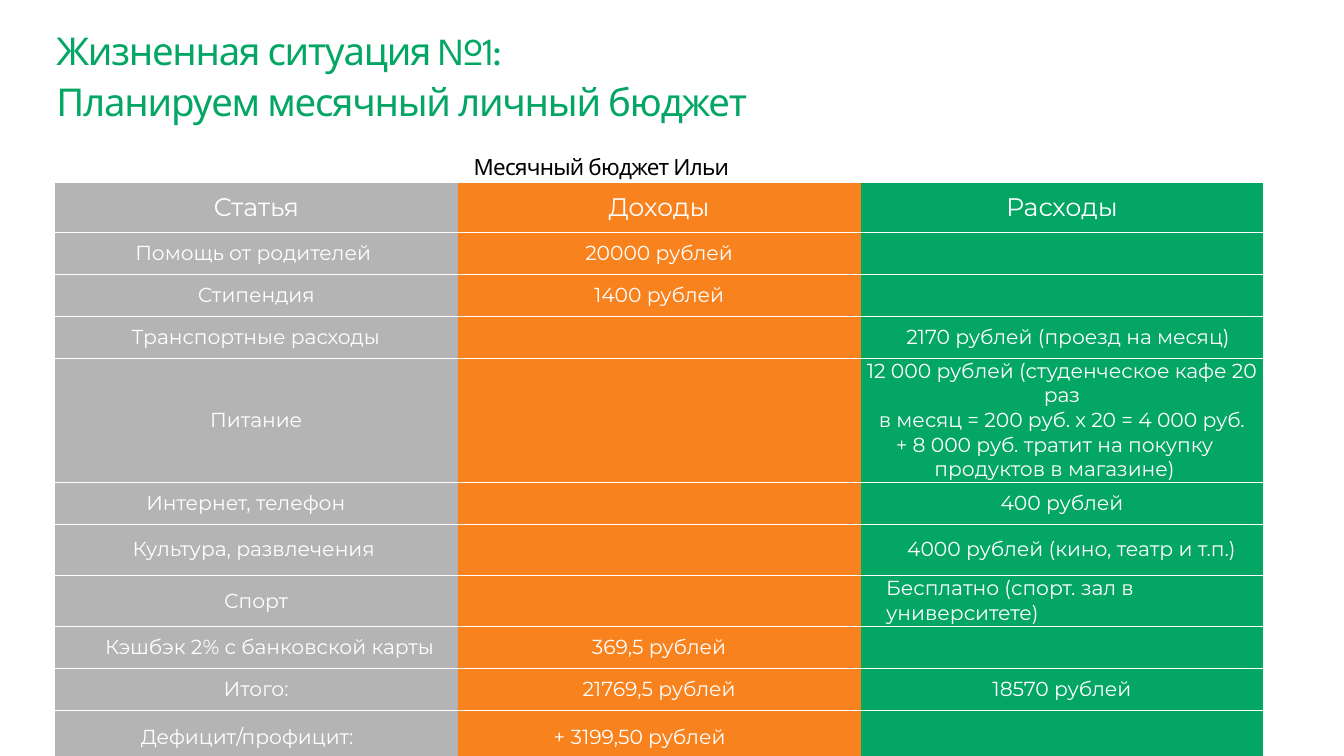
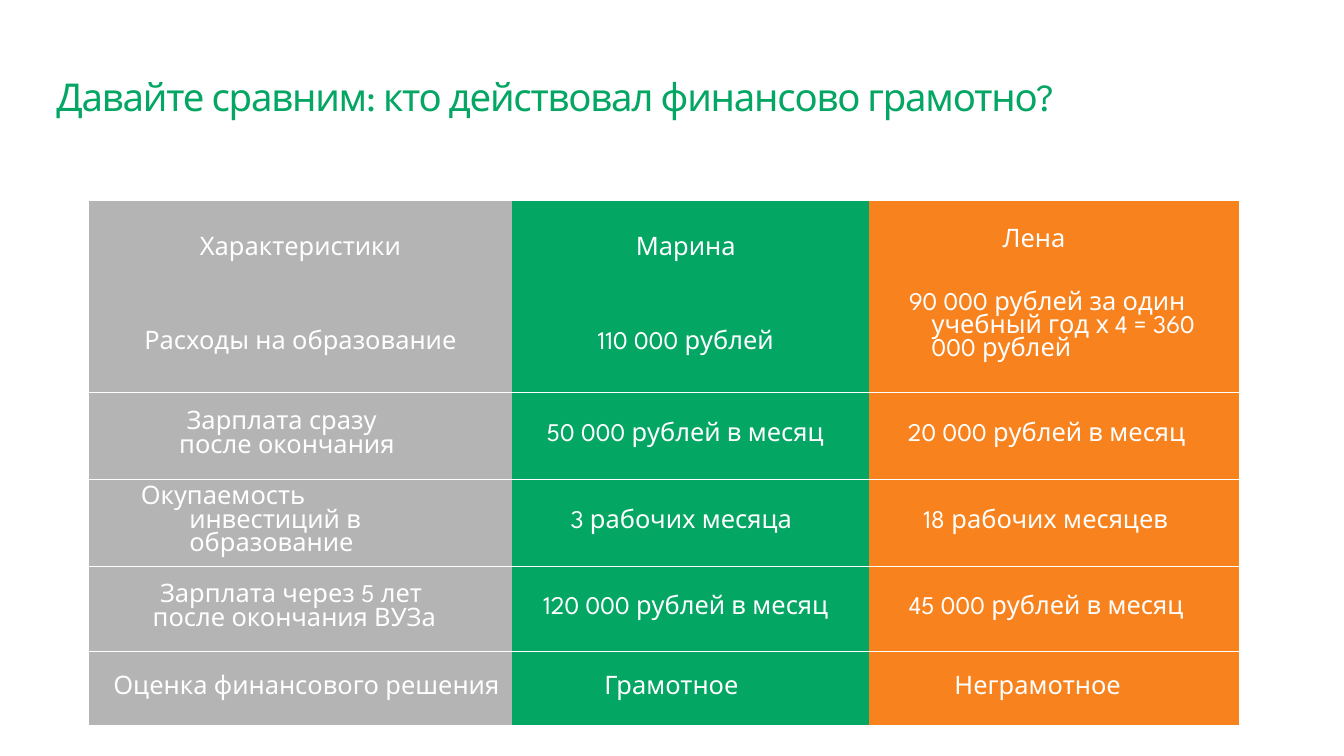
from dataclasses import dataclass
from lxml.etree import SubElement
from pptx import Presentation
from pptx.dml.color import RGBColor
from pptx.enum.text import MSO_ANCHOR, MSO_AUTO_SIZE, PP_ALIGN
from pptx.oxml import parse_xml
from pptx.oxml.ns import nsdecls, qn
from pptx.util import Inches, Pt


@dataclass(frozen=True)
class Theme:
    """Colours, fonts and type sizes shared by the slides."""

    green: str = "04A664"
    orange: str = "F7821E"
    grey: str = "B4B4B4"
    white: str = "FFFFFF"
    black: str = "000000"
    display: str = "League Spartan"
    body: str = "Montserrat"
    title_size: float = 30.2
    title_leading: float = 36.1
    caption_size: float = 17.6
    caption_leading: float = 21.1
    head_size: float = 20
    body_size: float = 16
    rule_width: float = 0.25


@dataclass(frozen=True)
class Box:
    """A region in percent of the slide's width and height."""

    left: float
    top: float
    width: float
    height: float

    def on(self, deck):
        """Return the region as lengths on the slides of a deck."""
        shares = (self.left, self.top, self.width, self.height)
        sides = (deck.slide_width, deck.slide_height) * 2
        return [round(side * share / 100) for share, side in zip(shares, sides)]


@dataclass(frozen=True)
class Line:
    """A paragraph, centred unless it has a left indent in inches."""

    text: str
    left: float = None
    first: float = 0
    right: float = 0
    before: float = 0


THEME = Theme()


def add_run(paragraph, text, font, size, colour, tracking=0):
    """Add one formatted run to a paragraph."""
    run = paragraph.add_run()
    run.text = text
    run.font.name = font
    run.font.size = Pt(size)
    run.font.bold = False
    run.font.color.rgb = RGBColor.from_string(colour)
    if tracking:
        run._r.get_or_add_rPr().set("spc", str(round(tracking * 100)))


def paragraphs(frame, count):
    """Return the first paragraph of a frame and as many more as needed."""
    return [frame.paragraphs[0]] + [frame.add_paragraph() for _ in range(count - 1)]


def prepare_frame(frame):
    """Remove the margins of a frame and let its text wrap from the top."""
    frame.margin_left = frame.margin_top = frame.margin_right = frame.margin_bottom = 0
    frame.word_wrap = True
    frame.auto_size = MSO_AUTO_SIZE.NONE
    frame.vertical_anchor = MSO_ANCHOR.TOP


def place_title(deck, slide, box, *lines):
    """Move and format the title placeholder."""
    title = slide.shapes.title
    title.left, title.top, title.width, title.height = box.on(deck)
    prepare_frame(title.text_frame)
    for index, (paragraph, text) in enumerate(zip(paragraphs(title.text_frame, len(lines)), lines)):
        paragraph.alignment = PP_ALIGN.LEFT
        paragraph.line_spacing = Pt(THEME.title_leading)
        paragraph.space_before = Pt(4 if index else 0)
        add_run(paragraph, text, THEME.display, THEME.title_size, THEME.green, -1)


def place_caption(deck, slide, box, text):
    """Write the heading of a table."""
    caption = slide.shapes.add_textbox(*box.on(deck)).text_frame
    prepare_frame(caption)
    paragraph = caption.paragraphs[0]
    paragraph.line_spacing = Pt(THEME.caption_leading)
    add_run(paragraph, text, THEME.display, THEME.caption_size, THEME.black, -0.6)


def rule_cell(cell):
    """Give a cell white rules above and below and none at its sides."""
    properties = cell._tc.get_or_add_tcPr()
    for index, side in enumerate("LRTB"):
        rule = parse_xml(f'<a:ln{side} {nsdecls("a")} w="{Pt(THEME.rule_width)}"/>')
        if side in "LR":
            SubElement(rule, qn("a:noFill"))
        else:
            SubElement(SubElement(rule, qn("a:solidFill")), qn("a:srgbClr")).set("val", THEME.white)
        properties.insert(index, rule)


def fill_cell(cell, lines, colour, font, size):
    """Colour a cell and write its paragraphs."""
    cell.margin_left = cell.margin_top = cell.margin_right = cell.margin_bottom = 0
    cell.vertical_anchor = MSO_ANCHOR.MIDDLE
    cell.fill.solid()
    cell.fill.fore_color.rgb = RGBColor.from_string(colour)
    rule_cell(cell)
    for paragraph, line in zip(paragraphs(cell.text_frame, len(lines)), lines):
        paragraph.alignment = PP_ALIGN.CENTER if line.left is None else PP_ALIGN.LEFT
        indents = {"marL": line.left or 0, "marR": line.right, "indent": line.first}
        for name, inches in indents.items():
            paragraph._p.get_or_add_pPr().set(name, str(Inches(inches)))
        if line.before:
            paragraph.space_before = Pt(line.before)
        add_run(paragraph, line.text, font, size, THEME.white)


def place_table(deck, slide, box, columns, rows, records, colours, font, sizes):
    """Lay a table over a box, with columns and rows as weights."""
    left, top, width, height = box.on(deck)
    table = slide.shapes.add_table(len(rows), len(columns), left, top, width, height).table
    table.first_row = table.horz_banding = False
    for column, weight in zip(table.columns, columns):
        column.width = round(width * weight / sum(columns))
    for row, weight in zip(table.rows, rows):
        row.height = round(height * weight / sum(rows))
    head, body = sizes
    for index, (row, record) in enumerate(zip(table.rows, records)):
        for cell, lines, colour in zip(row.cells, record, colours):
            fill_cell(cell, lines, colour, font, body if index else head)


def entry(text, left=None, **indents):
    """Return the content of a cell with a single paragraph."""
    return [Line(text, left, **indents)]


def budget_slide(deck):
    """Build the monthly budget."""
    slide = deck.slides.add_slide(deck.slide_layouts[5])
    place_title(deck, slide, Box(4.2, 3.63, 57.8, 12.8),
                "Жизненная ситуация №1:", "Планируем месячный личный бюджет")
    place_caption(deck, slide, Box(35.24, 20.31, 25, 3.63), "Месячный бюджет Ильи")
    food = [
        Line("12 000 рублей (студенческое кафе 20 раз"),
        Line("в месяц = 200 руб. х 20 = 4 000 руб."),
        Line("+ 8 000 руб. тратит на покупку продуктов в магазине)", right=0.16),
    ]
    records = [
        (entry("Статья"), entry("Доходы"), entry("Расходы")),
        (entry("Помощь от родителей", 0.88), entry("20000 рублей"), []),
        (entry("Стипендия"), entry("1400 рублей"), []),
        (entry("Транспортные расходы", 0.84), [], entry("2170 рублей (проезд на месяц)", 0.5)),
        (entry("Питание"), [], food),
        (entry("Интернет, телефон", 1), [], entry("400 рублей")),
        (entry("Культура, развлечения", 0.85), [], entry("4000 рублей (кино, театр и т.п.)", 0.51)),
        (entry("Спорт"), [], entry("Бесплатно (спорт. зал в университете)", 0.28)),
        (entry("Кэшбэк 2% с банковской карты", 0.55), entry("369,5 рублей"), []),
        (entry("Итого:"), entry("21769,5 рублей"), entry("18570 рублей")),
        (entry("Дефицит/профицит:", 0.94), entry("+ 3199,50 рублей", 1.05), []),
    ]
    rows = (0.55, 0.46, 0.46, 0.46, 1.09, 0.46, 0.56, 0.56, 0.46, 0.46, 0.58)
    place_table(deck, slide, Box(4.08, 24.06, 89.93, 73.8), (1, 1, 1), rows, records,
                (THEME.grey, THEME.orange, THEME.green), THEME.body,
                (THEME.head_size, THEME.body_size))


def comparison_slide(deck):
    """Build the comparison of two decisions."""
    slide = deck.slides.add_slide(deck.slide_layouts[5])
    place_title(deck, slide, Box(4.2, 9.67, 84.9, 6.05),
                "Давайте сравним: кто действовал финансово грамотно?")
    records = [
        ([Line("Характеристики"), Line("Расходы на образование", before=55.5)],
         [Line("Марина", right=0.11), Line("110 000 рублей", right=0.11, before=55.7)],
         [Line("Лена", right=0.44),
          Line("90 000 рублей за один учебный год х 4 = 360 000 рублей", 0.68, -0.25, 0.2, 30.8)]),
        (entry("Зарплата сразу после окончания", 0.99, first=0.08, right=0.95),
         entry("50 000 рублей в месяц", 0.38), entry("20 000 рублей в месяц", 0.42)),
        (entry("Окупаемость инвестиций в образование", 1.1, first=-0.53, right=1.2),
         entry("3 рабочих месяца", 0.64), entry("18 рабочих месяцев", 0.59)),
        (entry("Зарплата через 5 лет после окончания ВУЗа", 0.7, first=0.08, right=0.5),
         entry("120 000 рублей в месяц", 0.34), entry("45 000 рублей в месяц", 0.43)),
        (entry("Оценка финансового решения", 0.27),
         entry("Грамотное", 1.01), entry("Неграмотное", 0.93)),
    ]
    place_table(deck, slide, Box(6.6, 26.48, 85.58, 69.5), (4.63, 3.91, 4.04),
                (2.1, 0.95, 0.95, 0.94, 0.81), records,
                (THEME.grey, THEME.green, THEME.orange), THEME.display,
                (THEME.head_size, THEME.head_size))


def main():
    """Build and save the presentation."""
    deck = Presentation()
    deck.slide_width, deck.slide_height = Inches(14.7), Inches(8.27)
    budget_slide(deck)
    comparison_slide(deck)
    deck.save("out.pptx")


if __name__ == "__main__":
    main()
